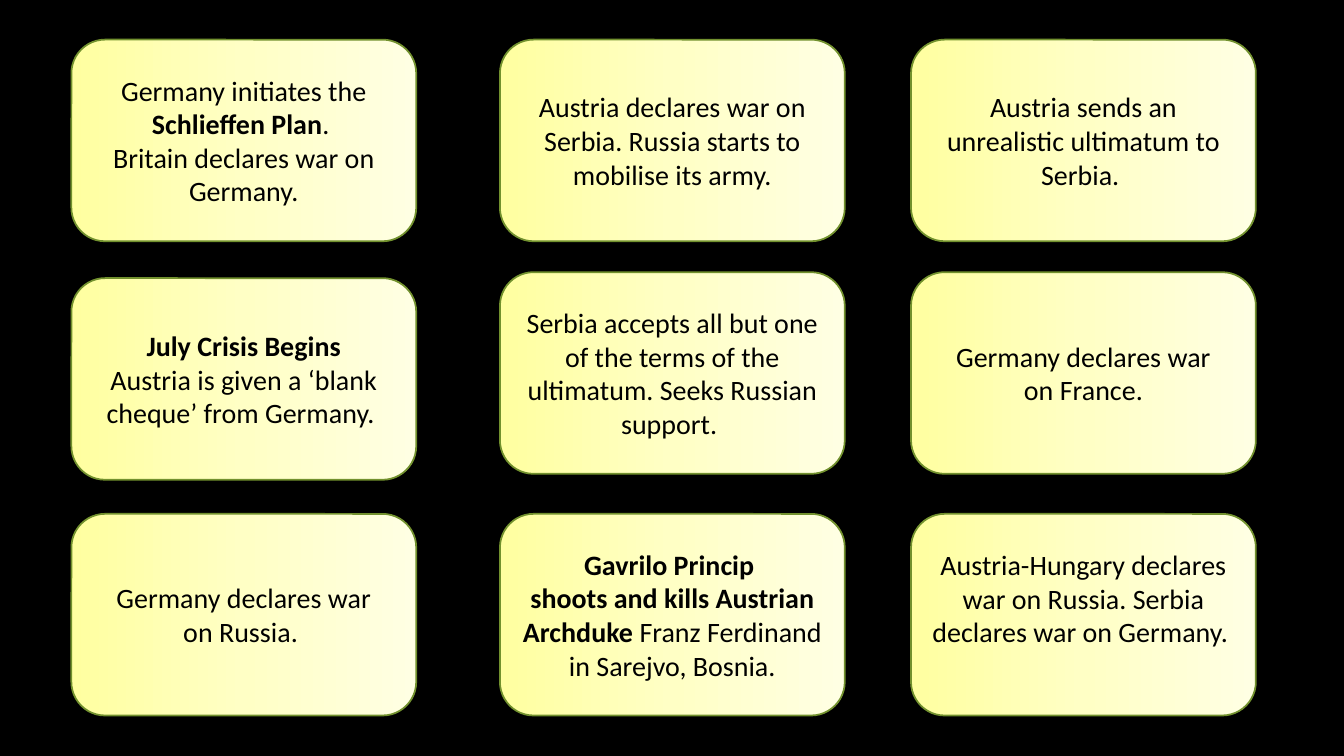
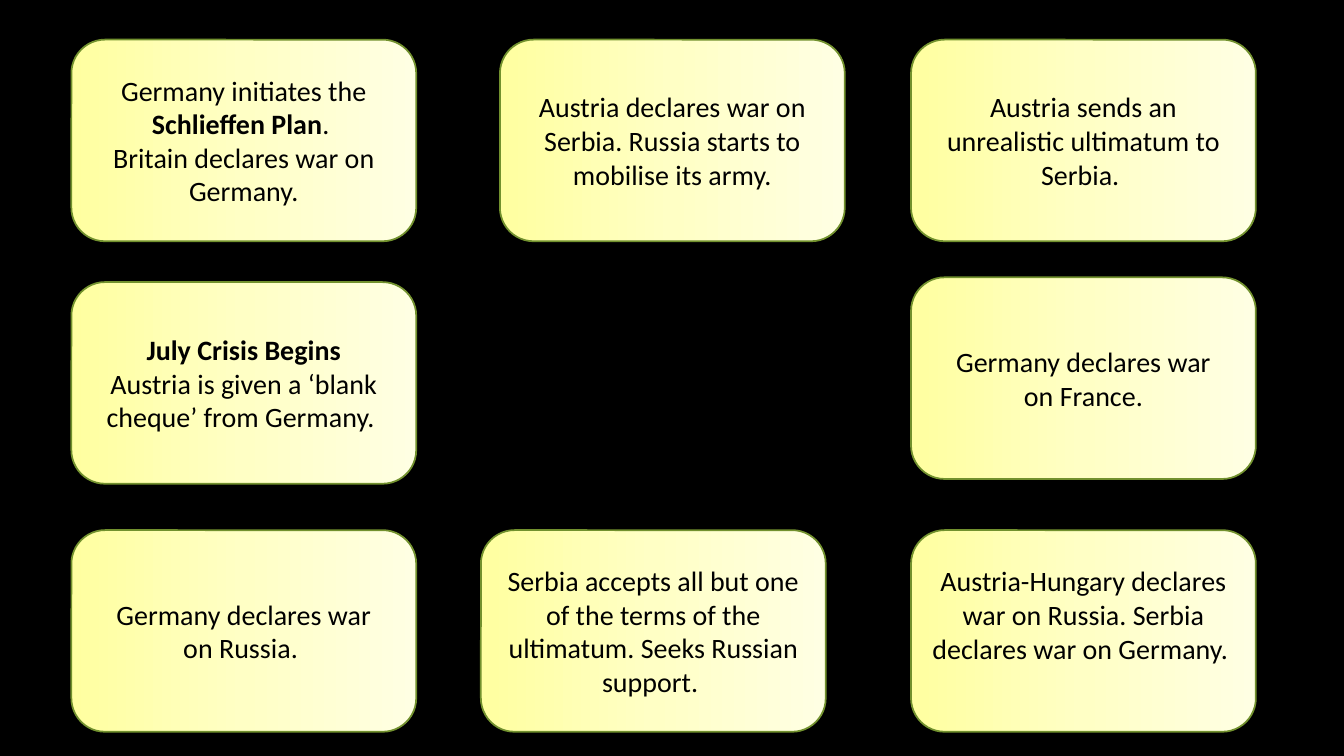
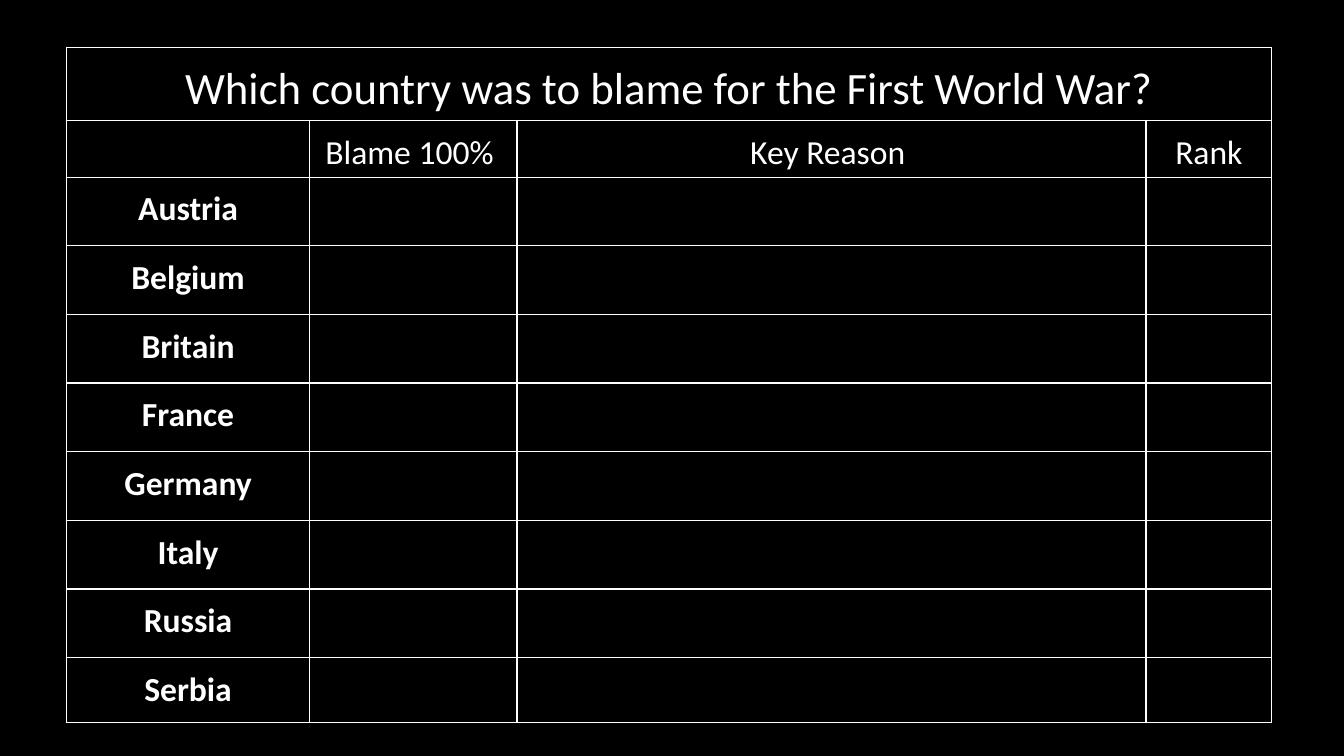
from copy import deepcopy

from lxml import etree
from pptx import Presentation
from pptx.dml.color import RGBColor
from pptx.enum.shapes import MSO_SHAPE
from pptx.enum.text import MSO_ANCHOR, PP_ALIGN
from pptx.oxml.ns import qn
from pptx.util import Cm, Pt

ROUND = MSO_SHAPE.ROUNDED_RECTANGLE
MIDDLE = MSO_ANCHOR.MIDDLE
CENTER = PP_ALIGN.CENTER

LEFT, MID, RIGHT = 1.8, 12.6, 22.96
TOP = 1.0

# Each card is a list of (text, bold) runs.
EVENTS = {
    "plan": [("Germany initiates the ", False), ("Schlieffen Plan", True),
             (". \nBritain declares war on Germany.", False)],
    "army": [("Austria declares war on Serbia. Russia starts to "
              "mobilise its army.", False)],
    "demand": [("Austria sends an unrealistic ultimatum to Serbia. ", False)],
    "july": [("July Crisis Begins\n", True),
             ("Austria is given a ‘blank cheque’ from Germany. ", False)],
    "reply": [("Serbia accepts all but one of the terms of the ultimatum. "
               "Seeks Russian support. ", False)],
    "france": [("Germany declares war\non France.", False)],
    "russia": [("Germany declares war\non Russia. ", False)],
    "murder": [("Gavrilo Princip \nshoots and kills Austrian\nArchduke ", True),
               ("Franz Ferdinand in Sarejvo, Bosnia.", False)],
    "allies": [("Austria-Hungary declares war on Russia. Serbia declares war "
                "on Germany. ", False)],
}
RAISED = {"allies": 0.97}  # bottom inset that lifts the text

BOARDS = [
    {"murder": (MID, 12.95), "july": (LEFT, 7.01), "demand": (RIGHT, TOP),
     "reply": (MID, 6.86), "army": (MID, TOP), "russia": (LEFT, 12.95),
     "france": (RIGHT, 6.86), "plan": (LEFT, TOP), "allies": (RIGHT, 12.95)},
    {"july": (LEFT, 7.11), "demand": (RIGHT, TOP), "reply": (12.12, 13.36),
     "army": (MID, TOP), "russia": (LEFT, 13.36), "france": (RIGHT, 6.99),
     "plan": (LEFT, TOP), "allies": (RIGHT, 13.36)},
]

TITLE = "Which country was to blame for the First World War?"
HEADS = ["", "Blame 100% ", "Key Reason ", "Rank"]
LANDS = ["Austria", "Belgium", "Britain", "France",
         "Germany", "Italy", "Russia", "Serbia"]
WIDTHS = [6.12, 5.23, 15.85, 3.17]
HEIGHTS = [1.57, 1.27] + [1.73] * 7 + [1.63]


def rgb(code):
    return RGBColor.from_string(code)


class Deck:
    FONT = "Calibri"
    BLACK, WHITE, EDGE = "000000", "FFFFFF", "72912E"
    SHADES = [(0, "FFFFA0"), (0.5, "FFFFC5"), (1, "FFFFE3")]
    CARD = Cm(8.69), Cm(5.08)

    def __init__(self):
        self.prs = Presentation()
        self.prs.slide_width, self.prs.slide_height = Cm(33.87), Cm(19.05)
        fill = self.prs.slide_master.background.fill
        fill.solid()
        fill.fore_color.rgb = rgb(self.BLACK)

    def start(self):
        self.slide = self.prs.slides.add_slide(self.prs.slide_layouts[6])

    def put(self, para, text, size, color, bold=False):
        """Add text to a paragraph, with a line break at each newline."""
        for i, line in enumerate(text.split("\n")):
            if i:
                para.add_line_break()
            if line:
                run = para.add_run()
                run.text = line
                font = run.font
                font.name, font.size, font.bold = self.FONT, Pt(size), bold
                font.color.rgb = rgb(color)

    def shade(self, shape):
        """Give a shape the three-stop gradient, from left to right."""
        fill = shape.fill
        fill.gradient()
        fill.gradient_angle = 0
        stops = next(shape.element.iter(qn("a:gsLst")))
        stops.append(deepcopy(stops[0]))
        for stop, (place, color) in zip(fill.gradient_stops, self.SHADES):
            stop.position = place
            stop.color.rgb = rgb(color)

    def card(self, x, y, runs, base=0.13):
        box = self.slide.shapes.add_shape(ROUND, Cm(x), Cm(y), *self.CARD)
        box.shadow.inherit = False
        self.shade(box)
        box.line.color.rgb = rgb(self.EDGE)
        box.line.width = Pt(1.25)
        frame = box.text_frame
        frame.word_wrap = True
        frame.vertical_anchor = MIDDLE
        frame.margin_bottom = Cm(base)
        para = frame.paragraphs[0]
        para.alignment = CENTER
        for text, bold in runs:
            self.put(para, text, 20, self.BLACK, bold)

    def frame(self, cell):
        """Draw thin white borders round a cell and leave it unfilled."""
        props = cell._tc.get_or_add_tcPr()
        for side in ("a:lnL", "a:lnR", "a:lnT", "a:lnB"):
            line = etree.SubElement(props, qn(side), w=str(Pt(1)))
            fill = etree.SubElement(line, qn("a:solidFill"))
            etree.SubElement(fill, qn("a:srgbClr"), val=self.WHITE)
        cell.fill.background()

    def label(self, cell, text, size, bold):
        cell.margin_left = cell.margin_right = Cm(0.1)
        cell.margin_top = cell.margin_bottom = Cm(0.1)
        para = cell.text_frame.paragraphs[0]
        para.alignment = CENTER
        para.line_spacing = 1.19
        para.space_after = Pt(6)
        self.put(para, text, size, self.WHITE, bold)

    def table(self, x, y, widths, heights, rows):
        """Add a table whose first row is one merged title cell."""
        grid = self.slide.shapes.add_table(
            len(heights), len(widths), Cm(x), Cm(y),
            Cm(sum(widths)), Cm(sum(heights))).table
        grid.first_row = grid.horz_banding = False
        for col, width in zip(grid.columns, widths):
            col.width = Cm(width)
        for row, height in zip(grid.rows, heights):
            row.height = Cm(height)
        for cell in grid.iter_cells():
            self.frame(cell)
        grid.cell(0, 0).merge(grid.cell(0, len(widths) - 1))
        for r, texts in enumerate(rows):
            for c, text in enumerate(texts):
                if text:
                    self.label(grid.cell(r, c), text, 24 if r else 32, r > 1)


def main():
    deck = Deck()
    for board in BOARDS:
        deck.start()
        for name, (x, y) in board.items():
            deck.card(x, y, EVENTS[name], RAISED.get(name, 0.13))
    deck.start()
    deck.table(1.68, 1.19, WIDTHS, HEIGHTS,
               [[TITLE], HEADS] + [[land] for land in LANDS])
    deck.prs.save("out.pptx")


if __name__ == "__main__":
    main()
